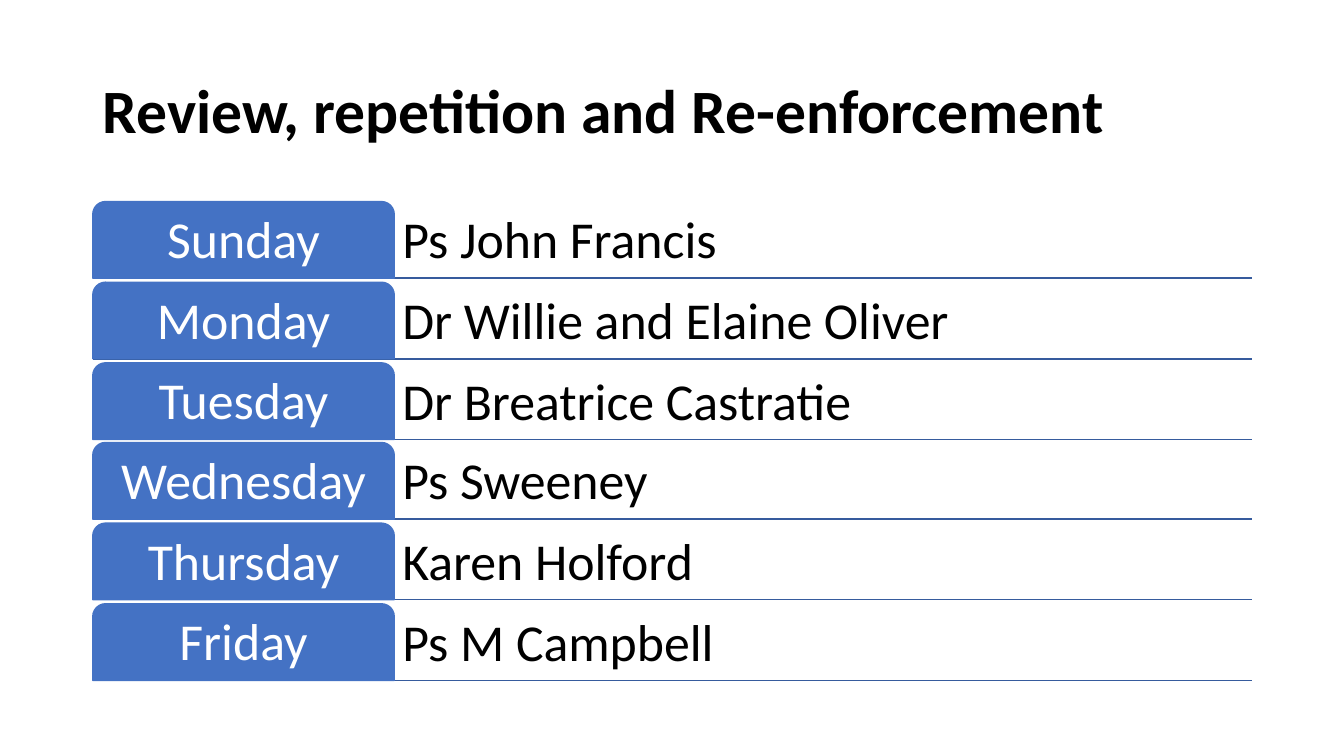
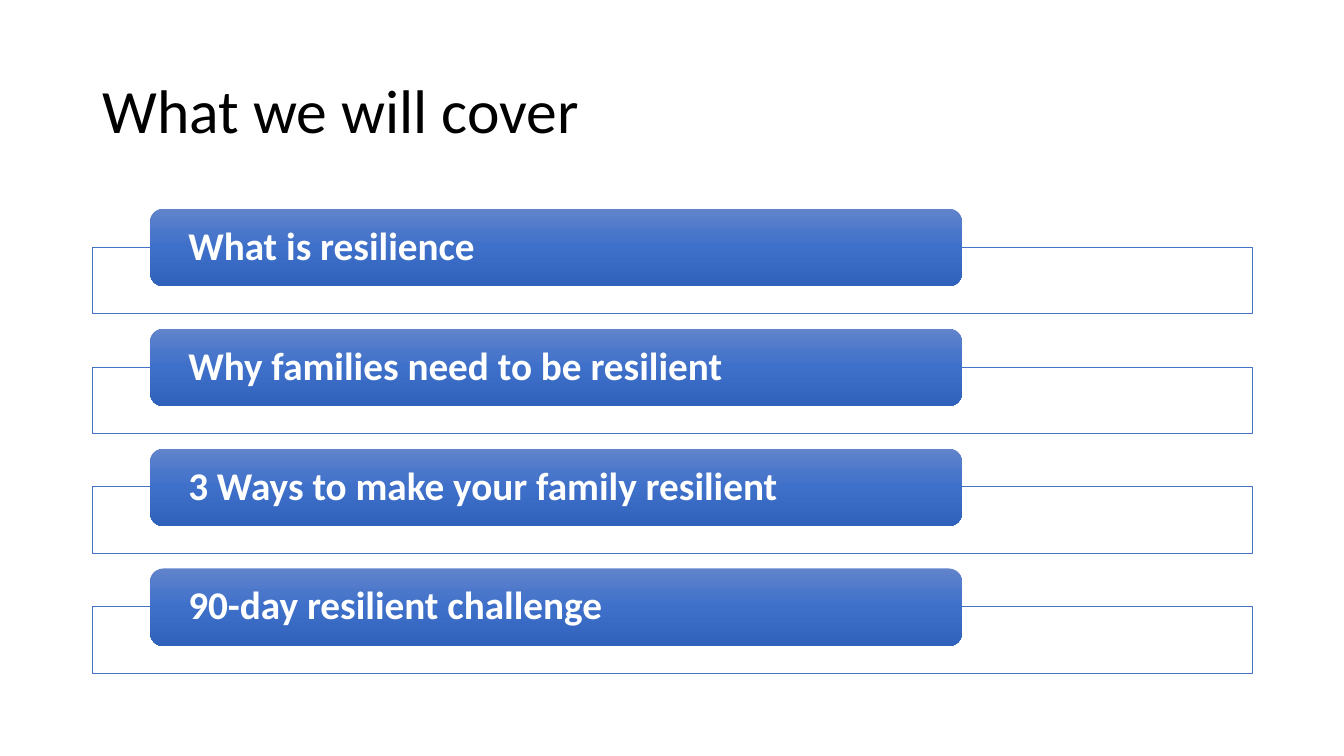
from copy import deepcopy

from pptx import Presentation
from pptx.dml.color import RGBColor
from pptx.enum.shapes import MSO_CONNECTOR as CONNECTOR, MSO_SHAPE as SHAPE
from pptx.enum.text import MSO_ANCHOR as ANCHOR, PP_ALIGN as ALIGN
from pptx.oxml.ns import qn
from pptx.oxml.xmlchemy import OxmlElement
from pptx.util import Pt

PX = 9144
LEFT, WIDTH = 92, 1150
FONT = "Calibri"
COLORS = {
    "black": "000000",
    "white": "FFFFFF",
    "blue": "4472C4",
    "rule": "365B9D",
    "grad_top": "6183CB",
    "grad_mid": "3E70CA",
    "grad_end": "3062BB",
}
GRADIENT = ("grad_top", "grad_mid", "grad_end")
SPEAKERS = [
    ("Sunday", "Ps John Francis"),
    ("Monday", "Dr Willie and Elaine Oliver"),
    ("Tuesday", "Dr Breatrice Castratie"),
    ("Wednesday", "Ps Sweeney"),
    ("Thursday", "Karen Holford"),
    ("Friday", "Ps M Campbell"),
]
TOPICS = [
    "What is resilience",
    "Why families need to be resilient",
    "3 Ways to make your family resilient",
    "90-day resilient challenge",
]


def px(*values):
    return [v * PX for v in values]


def rgb(name):
    return RGBColor.from_string(COLORS[name])


def set_attrs(obj, **formats):
    for name, value in formats.items():
        setattr(obj, name, value)


def set_text(sp, text, size, color="black", bold=False, align=ALIGN.LEFT,
             anchor=ANCHOR.MIDDLE, inset=(10, 5)):
    tf = sp.text_frame
    x, y = px(*inset)
    set_attrs(tf, word_wrap=True, vertical_anchor=anchor, margin_left=x,
              margin_right=x, margin_top=y, margin_bottom=y)
    p = tf.paragraphs[0]
    set_attrs(p, alignment=align, line_spacing=0.9)
    r = p.add_run()
    r.text = text
    set_attrs(r.font, name=FONT, size=Pt(size), bold=bold)
    r.font.color.rgb = rgb(color)


def add_text(s, box, text, size, **formats):
    set_text(s.shapes.add_textbox(*px(*box)), text, size, **formats)


def add_box(s, kind, box, fill=None, line=None, weight=1):
    sp = s.shapes.add_shape(kind, *px(*box))
    sp.shadow.inherit = False
    if fill:
        sp.fill.solid()
        sp.fill.fore_color.rgb = rgb(fill)
    if line:
        sp.line.color.rgb = rgb(line)
        sp.line.width = Pt(weight)
    else:
        sp.line.fill.background()
    return sp


def add_rule(s, y):
    line = s.shapes.add_connector(CONNECTOR.STRAIGHT, *px(LEFT, y, LEFT + WIDTH, y))
    line.line.color.rgb = rgb("rule")
    line.line.width = Pt(1)
    line._element.spPr.append(OxmlElement("a:effectLst"))


def set_gradient(sp):
    sp.fill.gradient()
    sp.fill.gradient_angle = 270
    stops = sp._element.spPr.find(".//" + qn("a:gsLst"))
    stops.append(deepcopy(stops[-1]))
    for i, (stop, name) in enumerate(zip(sp.fill.gradient_stops, GRADIENT)):
        stop.position = i / 2
        stop.color.rgb = rgb(name)


def set_alpha(sp, percent):
    alpha = OxmlElement("a:alpha")
    alpha.set("val", str(percent * 1000))
    sp._element.spPr.find(qn("a:solidFill"))[0].append(alpha)


def add_slide(prs, title, bold=False):
    s = prs.slides.add_slide(prs.slide_layouts[6])
    add_text(s, (LEFT, 40, WIDTH, 145), title, 44, bold=bold)
    return s


def add_speaker_row(s, y, day, speaker):
    tab, height = 299, 76
    add_rule(s, y + height)
    add_text(s, (LEFT + tab, y, WIDTH - tab, height), speaker, 37,
             anchor=ANCHOR.BOTTOM, inset=(8, 8))
    sp = add_box(s, SHAPE.ROUND_2_SAME_RECTANGLE, (LEFT, y, tab, height), "blue", "blue")
    set_text(sp, day, 37, color="white", align=ALIGN.CENTER, inset=(11, 10))


def add_topic(s, y, topic):
    frame = add_box(s, SHAPE.RECTANGLE, (LEFT, y + 38, WIDTH, 66), "white", "blue", 0.5)
    set_alpha(frame, 90)
    sp = add_box(s, SHAPE.ROUNDED_RECTANGLE, (LEFT + 57, y, 805, 77))
    set_gradient(sp)
    set_text(sp, topic, 28, color="white", bold=True, inset=(34, 4))


def main():
    prs = Presentation()
    prs.slide_width, prs.slide_height = px(1333, 750)

    s = add_slide(prs, "Review, repetition and Re-enforcement", bold=True)
    for i, (day, speaker) in enumerate(SPEAKERS):
        add_speaker_row(s, 200 + round(i * 79.8), day, speaker)

    s = add_slide(prs, "What we will cover")
    for i, topic in enumerate(TOPICS):
        add_topic(s, 207 + i * 119, topic)

    prs.save("out.pptx")


if __name__ == "__main__":
    main()
